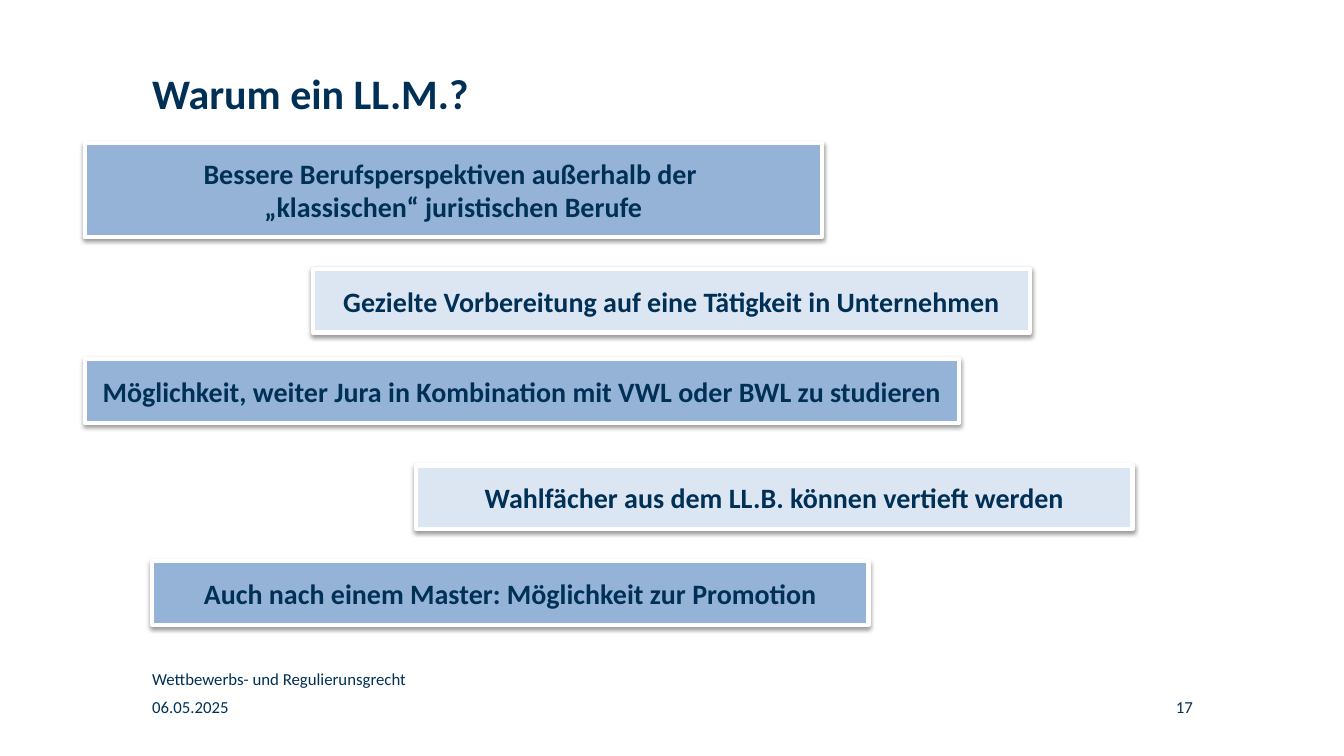
import pptx
import pptx.dml.color
import pptx.enum.shapes
import pptx.enum.text
import pptx.oxml
import pptx.oxml.ns
import pptx.util

Pt = pptx.util.Pt
RGBColor = pptx.dml.color.RGBColor
Align = pptx.enum.text.PP_ALIGN
Anchor = pptx.enum.text.MSO_ANCHOR

NAVY = RGBColor(0x00, 0x30, 0x56)
BLUE = RGBColor(0x95, 0xB3, 0xD7)
PALE_BLUE = RGBColor(0xDC, 0xE6, 0xF2)
WHITE = RGBColor(0xFF, 0xFF, 0xFF)

MARGIN = 108.7
BAR_HEIGHT = 45.4

# text, fill, (left, top, width, height)
REASONS = [
    ("Bessere Berufsperspektiven außerhalb der \v„klassischen“ juristischen Berufe",
     BLUE, (60.5, 102.2, 527, 67)),
    ("Gezielte Vorbereitung auf eine Tätigkeit in Unternehmen",
     PALE_BLUE, (223.9, 192.2, 512, BAR_HEIGHT)),
    ("Möglichkeit, weiter Jura in Kombination mit VWL oder BWL zu studieren",
     BLUE, (60.5, 256.5, 625, BAR_HEIGHT)),
    ("Wahlfächer aus dem LL.B. können vertieft werden",
     PALE_BLUE, (297.4, 332.6, 512, BAR_HEIGHT)),
    ("Auch nach einem Master: Möglichkeit zur Promotion",
     BLUE, (MARGIN, 401, 512, BAR_HEIGHT)),
]

SHADOW_XML = (
    f'<a:outerShdw {pptx.oxml.ns.nsdecls("a")} blurRad="40000" dist="20000" '
    'dir="5400000" rotWithShape="0">'
    '<a:srgbClr val="000000"><a:alpha val="38000"/></a:srgbClr></a:outerShdw>'
)


def set_text(shape, text, size, bold=False, align=Align.LEFT, anchor=Anchor.TOP, inset=0):
    frame = shape.text_frame
    frame.auto_size = pptx.enum.text.MSO_AUTO_SIZE.NONE
    frame.word_wrap = True
    frame.vertical_anchor = anchor
    frame.margin_left = frame.margin_right = Pt(inset)
    frame.margin_top = frame.margin_bottom = Pt(inset / 2)
    frame.text = text
    paragraph = frame.paragraphs[0]
    paragraph.alignment = align
    paragraph.font.name = "Calibri"
    paragraph.font.size = Pt(size)
    paragraph.font.bold = bold
    paragraph.font.color.rgb = NAVY


def place_title(slide, text, left, top, width, height):
    title = slide.shapes.title
    title.left, title.top, title.width, title.height = map(Pt, (left, top, width, height))
    set_text(title, text, 30, bold=True)


def add_reason(slide, text, fill, box):
    """Add a white-framed bar with a soft shadow below it."""
    bar = slide.shapes.add_shape(
        pptx.enum.shapes.MSO_SHAPE.RECTANGLE, *map(Pt, box))
    bar.fill.solid()
    bar.fill.fore_color.rgb = fill
    bar.line.color.rgb = WHITE
    bar.line.width = Pt(3)
    bar.shadow.inherit = False
    effects = bar._element.spPr.find(pptx.oxml.ns.qn("a:effectLst"))
    effects.append(pptx.oxml.parse_xml(SHADOW_XML))
    set_text(bar, text, 20, bold=True, align=Align.CENTER, anchor=Anchor.MIDDLE, inset=7.2)


def add_footer(slide, left, top, width):
    """Put the course above the date, and the page number at the right."""
    line_height, line_step, number_width = 14.4, 20.1, 110.9
    entries = [
        ("Wettbewerbs- und Regulierunsgrecht", left, top, 303.8, Align.LEFT),
        ("06.05.2025", left, top + line_step, 223.9, Align.LEFT),
        ("17", left + width - number_width, top + line_step, number_width, Align.RIGHT),
    ]
    for text, x, y, entry_width, align in entries:
        box = slide.shapes.add_textbox(Pt(x), Pt(y), Pt(entry_width), Pt(line_height))
        set_text(box, text, 12, align=align)


def main():
    presentation = pptx.Presentation()
    presentation.slide_width = Pt(960.5)
    presentation.slide_height = Pt(540)
    slide = presentation.slides.add_slide(presentation.slide_layouts.get_by_name("Title Only"))
    place_title(slide, "Warum ein LL.M.?", MARGIN, 48.2, 508.3, 98.6)
    for text, fill, box in REASONS:
        add_reason(slide, text, fill, box)
    add_footer(slide, MARGIN, 477.4, 743.8)
    presentation.save("out.pptx")


if __name__ == "__main__":
    main()
